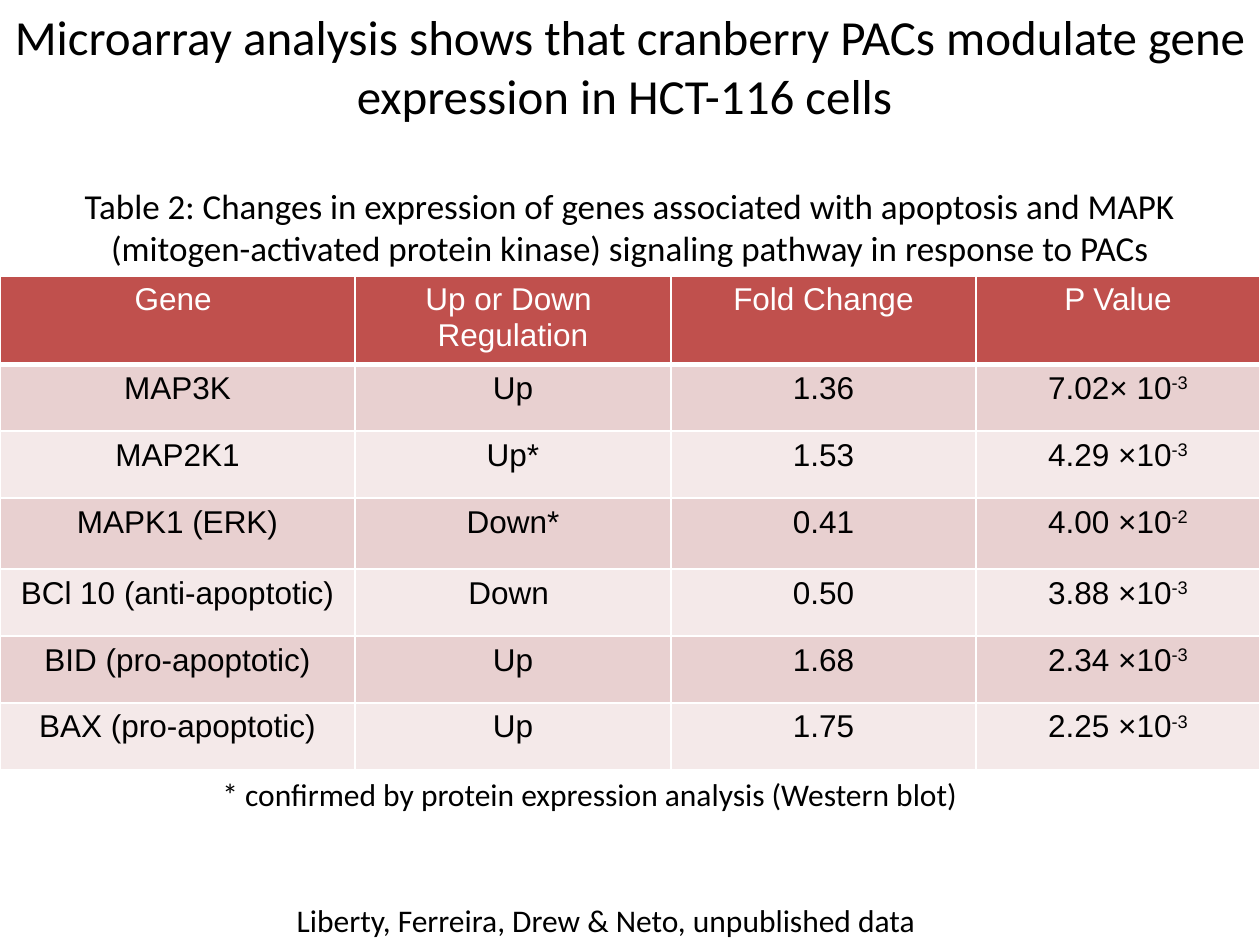
from dataclasses import dataclass

from lxml import etree
from pptx import Presentation
from pptx.dml.color import RGBColor
from pptx.enum.text import PP_ALIGN
from pptx.oxml.ns import qn
from pptx.util import Emu, Pt

CENTER, LEFT = PP_ALIGN.CENTER, PP_ALIGN.LEFT
EMU_PER_PX = 914400 / 126


@dataclass(frozen=True)
class Theme:
    """Colours, fonts and type sizes of the slide."""
    text: str = "000000"
    white: str = "FFFFFF"
    header: str = "C0504D"
    bands: tuple = ("E8D0D0", "F4E9E9")
    body_font: str = "Calibri"
    table_font: str = "Arial"
    title: int = 28
    caption: int = 20
    body: int = 18


THEME = Theme()
COLUMNS = (355, 316, 305, 284)
ROWS = (86, 67, 67, 71, 67, 67, 67)
HEADINGS = ("Gene ", "Up or Down \nRegulation", "Fold Change", "P Value")
GENES = (
    ("MAP3K", "Up", "1.36", "7.02× 10^-3"),
    ("MAP2K1", "Up*", "1.53", "4.29 ×10^-3"),
    ("MAPK1 (ERK)", "Down*", "0.41", "4.00 ×10^-2"),
    ("BCl 10 (anti-apoptotic)", "Down ", "0.50", "3.88 ×10^-3"),
    ("BID (pro-apoptotic)", "Up", "1.68", "2.34 ×10^-3"),
    ("BAX (pro-apoptotic)", "Up", "1.75", "2.25 ×10^-3"),
)


def px(n):
    """Turn pixels into EMU."""
    return Emu(round(n * EMU_PER_PX))


def style_paragraph(p, font, size, color, align):
    """Set the type and alignment of a paragraph."""
    p.alignment = align
    p.font.name = font
    p.font.size = Pt(size)
    p.font.bold = False
    p.font.color.rgb = RGBColor.from_string(color)


def add_text(s, box, text, size, align=CENTER):
    """Place one paragraph of text in a box."""
    tf = s.shapes.add_textbox(*map(px, box)).text_frame
    tf.word_wrap = True
    p = tf.paragraphs[0]
    p.add_run().text = text
    style_paragraph(p, THEME.body_font, size, THEME.text, align)


def add_borders(cell, bottom):
    """Draw white lines round a cell, with the given bottom width in points."""
    tc_pr = cell._tc.get_or_add_tcPr()
    for tag, width in (("lnL", 1), ("lnR", 1), ("lnT", 1), ("lnB", bottom)):
        line = etree.SubElement(tc_pr, qn(f"a:{tag}"), w=str(Pt(width)))
        fill = etree.SubElement(line, qn("a:solidFill"))
        etree.SubElement(fill, qn("a:srgbClr"), val=THEME.white)


def fill_cell(cell, text, fill, color, bottom=1):
    """Write a cell, raising whatever follows a caret."""
    add_borders(cell, bottom)
    cell.fill.solid()
    cell.fill.fore_color.rgb = RGBColor.from_string(fill)
    tf = cell.text_frame
    for i, line in enumerate(text.split("\n")):
        p = tf.add_paragraph() if i else tf.paragraphs[0]
        style_paragraph(p, THEME.table_font, THEME.body, color, CENTER)
        base, _, exponent = line.partition("^")
        p.add_run().text = base
        if exponent:
            r = p.add_run()
            r.text = exponent
            r.font._element.set("baseline", "30000")


def add_gene_table(s, left, top):
    """Build the gene expression table from its top left corner."""
    box = (left, top, sum(COLUMNS), sum(ROWS))
    table = s.shapes.add_table(len(ROWS), len(COLUMNS), *map(px, box)).table
    for column, width in zip(table.columns, COLUMNS):
        column.width = px(width)
    for row, height in zip(table.rows, ROWS):
        row.height = px(height)
    for c, heading in enumerate(HEADINGS):
        fill_cell(table.cell(0, c), heading, THEME.header, THEME.white, bottom=3)
    for r, gene in enumerate(GENES):
        for c, value in enumerate(gene):
            fill_cell(table.cell(r + 1, c), value, THEME.bands[r % 2], THEME.text)


def main():
    """Build and save the slide."""
    prs = Presentation()
    prs.slide_width, prs.slide_height = px(1260), px(945)
    s = prs.slides.add_slide(prs.slide_layouts[6])
    add_text(s, (0, 0, 1260, 131),
             "Microarray analysis shows that cranberry PACs modulate gene "
             "expression in HCT-116 cells ", THEME.title)
    add_gene_table(s, 0, 276)
    add_text(s, (210, 769, 829, 50),
             "* confirmed by protein expression analysis (Western blot)",
             THEME.body, LEFT)
    add_text(s, (0, 178, 1260, 97),
             "Table 2: Changes in expression of genes associated with apoptosis "
             "and MAPK (mitogen-activated protein kinase) signaling pathway in "
             "response to PACs", THEME.caption)
    add_text(s, (174, 895, 864, 50),
             "Liberty, Ferreira, Drew & Neto, unpublished data", THEME.body)
    prs.save("out.pptx")


if __name__ == "__main__":
    main()
